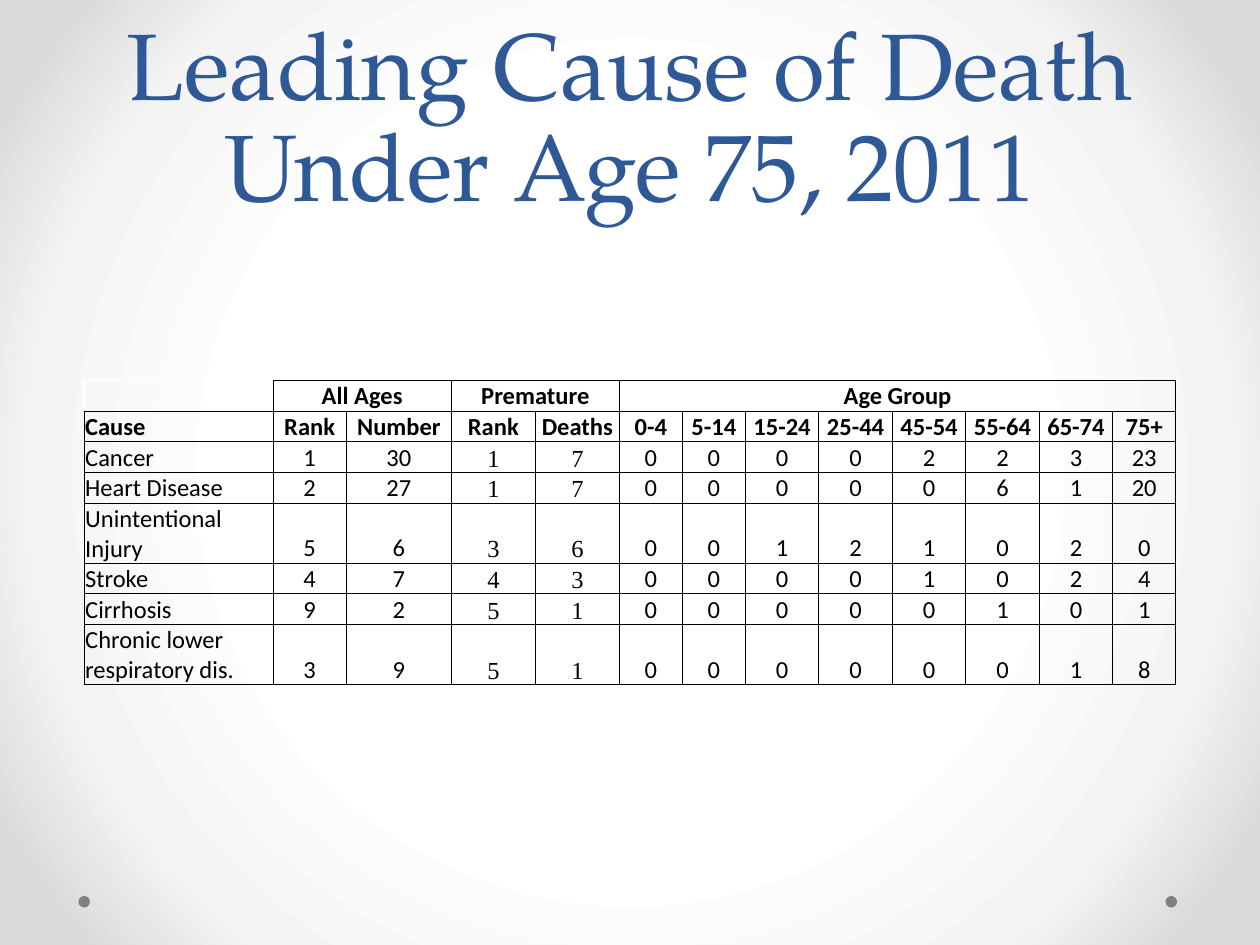
import pptx
import pptx.dml.color
import pptx.enum.shapes
import pptx.enum.text
import pptx.oxml
import pptx.oxml.ns
import pptx.util

Pt = pptx.util.Pt
RGBColor = pptx.dml.color.RGBColor
PP_ALIGN = pptx.enum.text.PP_ALIGN
MSO_ANCHOR = pptx.enum.text.MSO_ANCHOR

TITLE_BLUE = RGBColor(0x2F, 0x58, 0x97)
DOT_GRAY = RGBColor(0x80, 0x80, 0x80)
BLACK = RGBColor(0, 0, 0)
BACKGROUND_STOPS = [
    (50, RGBColor(0xFF, 0xFF, 0xFF)),
    (76, RGBColor(0xF4, 0xF4, 0xF4)),
    (92, RGBColor(0xDA, 0xDA, 0xDA)),
]
NAMESPACE = pptx.oxml.ns.nsdecls("a")


def add_border(cell, sides):
    properties = cell._tc.get_or_add_tcPr()
    for index, side in enumerate(sides):
        line = pptx.oxml.parse_xml(
            f'<a:ln{side} {NAMESPACE} w="{Pt(0.5)}"><a:solidFill>'
            f'<a:srgbClr val="{BLACK}"/></a:solidFill></a:ln{side}>'
        )
        properties.insert(index, line)


presentation = pptx.Presentation()
presentation.slide_width = Pt(720)
presentation.slide_height = Pt(540)
slide = presentation.slides.add_slide(presentation.slide_layouts[6])

background_fill = slide.background.fill
background_fill.gradient()
gradient = background_fill._fill._gradFill
stops = "".join(
    f'<a:gs pos="{position * 1000}"><a:srgbClr val="{color}"/></a:gs>'
    for position, color in BACKGROUND_STOPS
)
gradient.getparent().replace(gradient, pptx.oxml.parse_xml(
    f'<a:gradFill {NAMESPACE} rotWithShape="1"><a:gsLst>{stops}</a:gsLst>'
    '<a:path path="circle"><a:fillToRect l="50000" t="50000" r="50000" b="50000"/>'
    '</a:path></a:gradFill>'
))

for left in (666, 44.8):
    dot = slide.shapes.add_shape(
        pptx.enum.shapes.MSO_SHAPE.OVAL, Pt(left), Pt(512), Pt(6.6), Pt(6.6)
    )
    dot.shadow.inherit = False
    dot.fill.solid()
    dot.fill.fore_color.rgb = DOT_GRAY
    dot.line.fill.background()

title = slide.shapes.add_textbox(Pt(36), Pt(0), Pt(648), Pt(126))
title_frame = title.text_frame
title_frame.word_wrap = True
title_frame.vertical_anchor = MSO_ANCHOR.BOTTOM
title_frame.margin_bottom = 0
title_frame.text = "Leading Cause of Death Under Age 75, 2011"
paragraph = title_frame.paragraphs[0]
paragraph.alignment = PP_ALIGN.CENTER
paragraph.line_spacing = Pt(58)
title_font = paragraph.runs[0].font
title_font.name = "TeX Gyre Pagella"
title_font.size = Pt(54)
title_font.color.rgb = TITLE_BLUE

column_widths = [108, 42, 60, 48, 48, 36, 36] + [42] * 5 + [36]
groups = [("All Ages", 1, 2), ("Premature", 3, 4), ("Age Group", 5, 12)]
group_row = [""] * len(column_widths)
for name, first, last in groups:
    group_row[first] = name
rows = [
    group_row,
    ["Cause", "Rank", "Number", "Rank", "Deaths", "0-4", "5-14", "15-24",
     "25-44", "45-54", "55-64", "65-74", "75+"],
    ["Cancer", 1, 30, 1, 7, 0, 0, 0, 0, 2, 2, 3, 23],
    ["Heart Disease", 2, 27, 1, 7, 0, 0, 0, 0, 0, 6, 1, 20],
    ["Unintentional Injury", 5, 6, 3, 6, 0, 0, 1, 2, 1, 0, 2, 0],
    ["Stroke", 4, 7, 4, 3, 0, 0, 0, 0, 1, 0, 2, 4],
    ["Cirrhosis", 9, 2, 5, 1, 0, 0, 0, 0, 0, 1, 0, 1],
    ["Chronic lower respiratory dis.", 3, 9, 5, 1, 0, 0, 0, 0, 0, 0, 1, 8],
]
header_rows = 2
premature_columns = (3, 4)

table = slide.shapes.add_table(
    len(rows), len(column_widths), Pt(48), Pt(217.4),
    Pt(sum(column_widths)), Pt(15 * len(rows))
).table
table.first_row = False
table.horz_banding = False
for column, width in zip(table.columns, column_widths):
    column.width = Pt(width)

for row_index, row in enumerate(rows):
    table.rows[row_index].height = Pt(15)
    is_header = row_index < header_rows
    for column_index, value in enumerate(row):
        cell = table.cell(row_index, column_index)
        cell.fill.background()
        is_corner = row_index == 0 and column_index == 0
        add_border(cell, "RB" if is_corner else "LRTB")
        cell.vertical_anchor = MSO_ANCHOR.BOTTOM
        cell.margin_left = cell.margin_right = cell.margin_top = Pt(0.7)
        cell.margin_bottom = 0
        cell.text_frame.text = str(value)
        paragraph = cell.text_frame.paragraphs[0]
        paragraph.alignment = PP_ALIGN.CENTER if column_index else PP_ALIGN.LEFT
        is_serif = column_index in premature_columns and not is_header
        paragraph.font.size = Pt(14)
        for run in paragraph.runs:
            run.font.name = "Times New Roman" if is_serif else "Calibri"
            run.font.size = Pt(14)
            run.font.bold = is_header
            run.font.color.rgb = BLACK

for name, first, last in groups:
    table.cell(0, first).merge(table.cell(0, last))

presentation.save("out.pptx")
